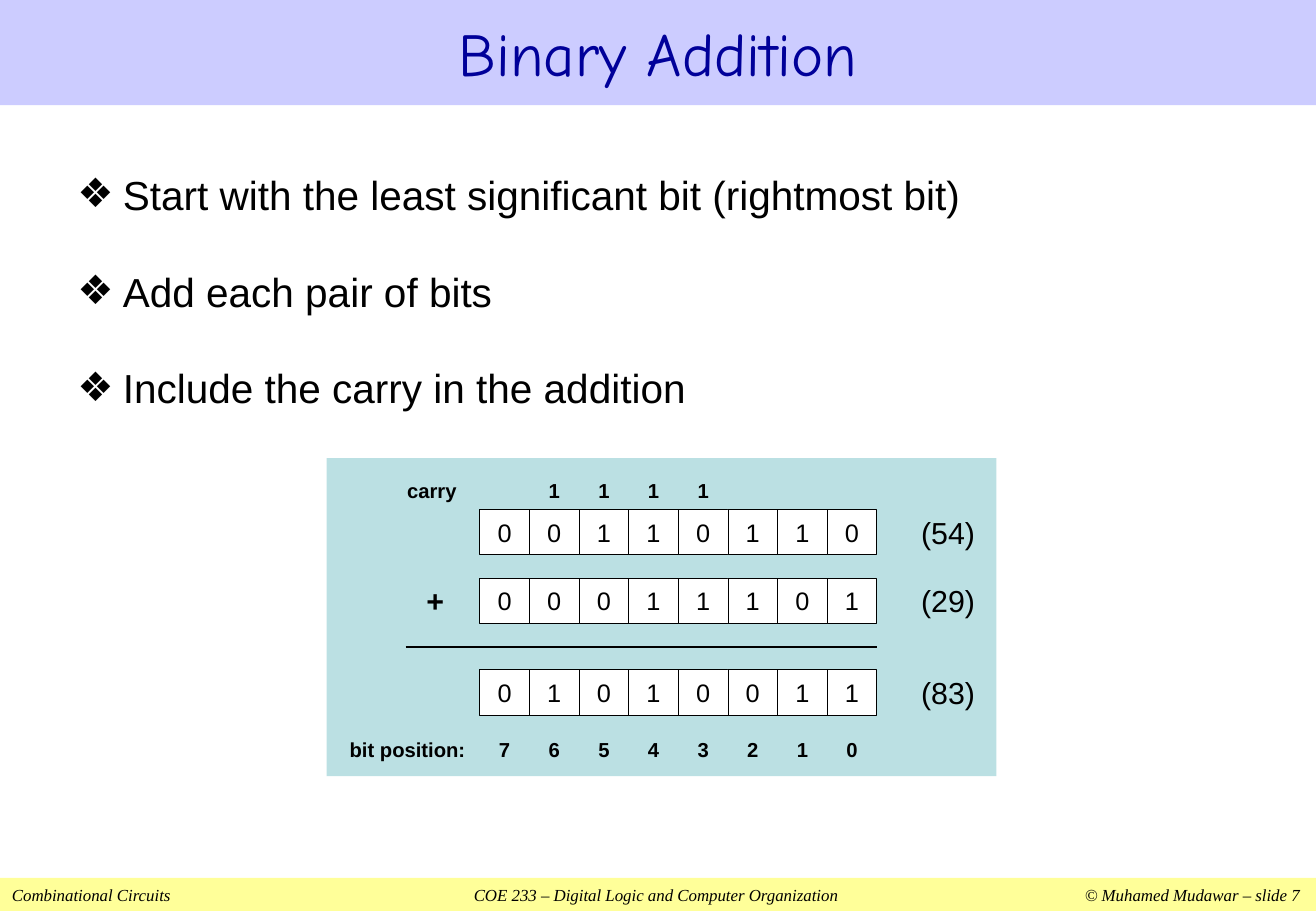
import collections

import lxml.etree
import pptx
import pptx.dml.color
import pptx.enum.shapes
import pptx.enum.text
import pptx.oxml.ns
import pptx.util

Box = collections.namedtuple("Box", "left top width height")
Cm = pptx.util.Cm
Pt = pptx.util.Pt
ALIGN = pptx.enum.text.PP_ALIGN

COLORS = {
    "ink": "000000",
    "title": "000099",
    "banner": "CCCCFF",
    "panel": "BBE0E3",
    "cell": "FFFFFF",
    "footer": "FFFF99",
}
OPERANDS = [
    ("00110110", "(54)", 1.07),
    ("00011101", "(29)", 2.51),
    ("01010011", "(83)", 4.42),
]
CARRIES = {1: "1", 2: "1", 3: "1", 4: "1"}
BULLETS = [
    "Start with the least significant bit (rightmost bit)",
    "Add each pair of bits",
    "Include the carry in the addition",
]


def color(name):
    return pptx.dml.color.RGBColor.from_string(COLORS[name])


def add_xml(parent, tag, **attributes):
    return lxml.etree.SubElement(parent, pptx.oxml.ns.qn(tag), attributes)


def within(box, left, top, width, height):
    return Box(box.left + left, box.top + top, width, height)


def add_rectangle(page, box, fill, line_width=None):
    shape = page.shapes.add_shape(
        pptx.enum.shapes.MSO_SHAPE.RECTANGLE, *map(Cm, box))
    shape.shadow.inherit = False
    shape.fill.solid()
    shape.fill.fore_color.rgb = color(fill)
    if line_width:
        shape.line.color.rgb = color("ink")
        shape.line.width = Pt(line_width)
    else:
        shape.line.fill.background()
    return shape


def set_frame(shape, margin=0, wrap=True):
    frame = shape.text_frame
    frame.margin_left = frame.margin_right = Cm(margin)
    frame.margin_top = frame.margin_bottom = 0
    frame.word_wrap = wrap
    frame.vertical_anchor = pptx.enum.text.MSO_ANCHOR.MIDDLE
    return frame


def add_span(para, text, size, font="Arial", ink="ink", bold=False, italic=False):
    span = para.add_run()
    span.text = text
    span.font.size = Pt(size)
    span.font.name = font
    span.font.bold = bold
    span.font.italic = italic
    span.font.color.rgb = color(ink)


def add_label(page, box, text, size, bold=False, align=ALIGN.CENTER):
    shape = page.shapes.add_textbox(*map(Cm, box))
    para = set_frame(shape, wrap=False).paragraphs[0]
    para.alignment = align
    add_span(para, text, size, bold=bold)


def add_banner(page, box):
    para = set_frame(add_rectangle(page, box, "banner")).paragraphs[0]
    para.alignment = ALIGN.CENTER
    add_span(para, "Binary Addition", 36, "Comic Neue", "title")


def add_footer(page, box):
    para = set_frame(add_rectangle(page, box, "footer"), 0.25).paragraphs[0]
    para.alignment = ALIGN.LEFT
    stops = add_xml(para._p.get_or_add_pPr(), "a:tabLst")
    for position, side in ((13.46, "ctr"), (26.92, "r")):
        add_xml(stops, "a:tab", pos=str(Cm(position)), algn=side)
    for text in ("Combinational Circuits",
                 "\tCOE 233 – Digital Logic and Computer Organization",
                 "\t© Muhamed Mudawar – slide 7"):
        add_span(para, text, 10, "Times New Roman", italic=True)


def add_bullets(page, box):
    frame = page.shapes.add_textbox(*map(Cm, box)).text_frame
    frame.word_wrap = True
    for index, text in enumerate(BULLETS):
        para = frame.add_paragraph() if index else frame.paragraphs[0]
        para.line_spacing = 1.3
        para.space_before = Pt(20)
        properties = para._p.get_or_add_pPr()
        properties.set("marL", str(Cm(0.95)))
        properties.set("indent", str(Cm(-0.95)))
        add_xml(properties, "a:buFont", typeface="Arial")
        add_xml(properties, "a:buChar", char="❖")
        add_span(para, text, 24)


def add_sum_panel(page, box):
    add_rectangle(page, box, "panel")
    bits_left, bits_width, cell_height = 3.2, 8.3, 0.95
    pitch = bits_width / 8
    for bits, value, top in OPERANDS:
        for column, bit in enumerate(bits):
            cell = within(box, bits_left + column * pitch, top, pitch, cell_height)
            para = set_frame(add_rectangle(page, cell, "cell", 0.38)).paragraphs[0]
            para.alignment = ALIGN.CENTER
            add_span(para, bit, 15)
        add_label(page, within(box, 12.42, top, 1.14, cell_height), value, 18)
    add_label(page, within(box, 2.08, OPERANDS[1][2], 0.38, cell_height), "+", 18, True)

    positions = {column: str(7 - column) for column in range(8)}
    for name, left, width, top, digits in (
            ("carry", 1.68, 1.4, 0.42, CARRIES),
            ("bit position:", 0.48, 2.46, 5.84, positions)):
        add_label(page, within(box, left, top, width, 0.5), name, 12, True, ALIGN.LEFT)
        for column, digit in digits.items():
            spot = within(box, bits_left + column * pitch, top, pitch, 0.5)
            add_label(page, spot, digit, 12, True)

    level = Cm(box.top + 3.94)
    rule = page.shapes.add_connector(
        pptx.enum.shapes.MSO_CONNECTOR.STRAIGHT, Cm(box.left + 1.65), level,
        Cm(box.left + bits_left + bits_width), level)
    rule.line.color.rgb = color("ink")
    rule.line.width = Pt(1.13)
    add_xml(rule._element.spPr, "a:effectLst")


def main():
    deck = pptx.Presentation()
    deck.slide_width = Cm(27.51)
    deck.slide_height = Cm(19.05)
    page = deck.slides.add_slide(deck.slide_layouts[6])
    add_footer(page, Box(0, 18.36, 27.51, 0.69))
    add_banner(page, Box(0, 0, 27.51, 2.2))
    add_bullets(page, Box(1.37, 3.12, 24.77, 5.44))
    add_sum_panel(page, Box(6.83, 9.58, 14, 6.65))
    deck.save("out.pptx")


if __name__ == "__main__":
    main()
